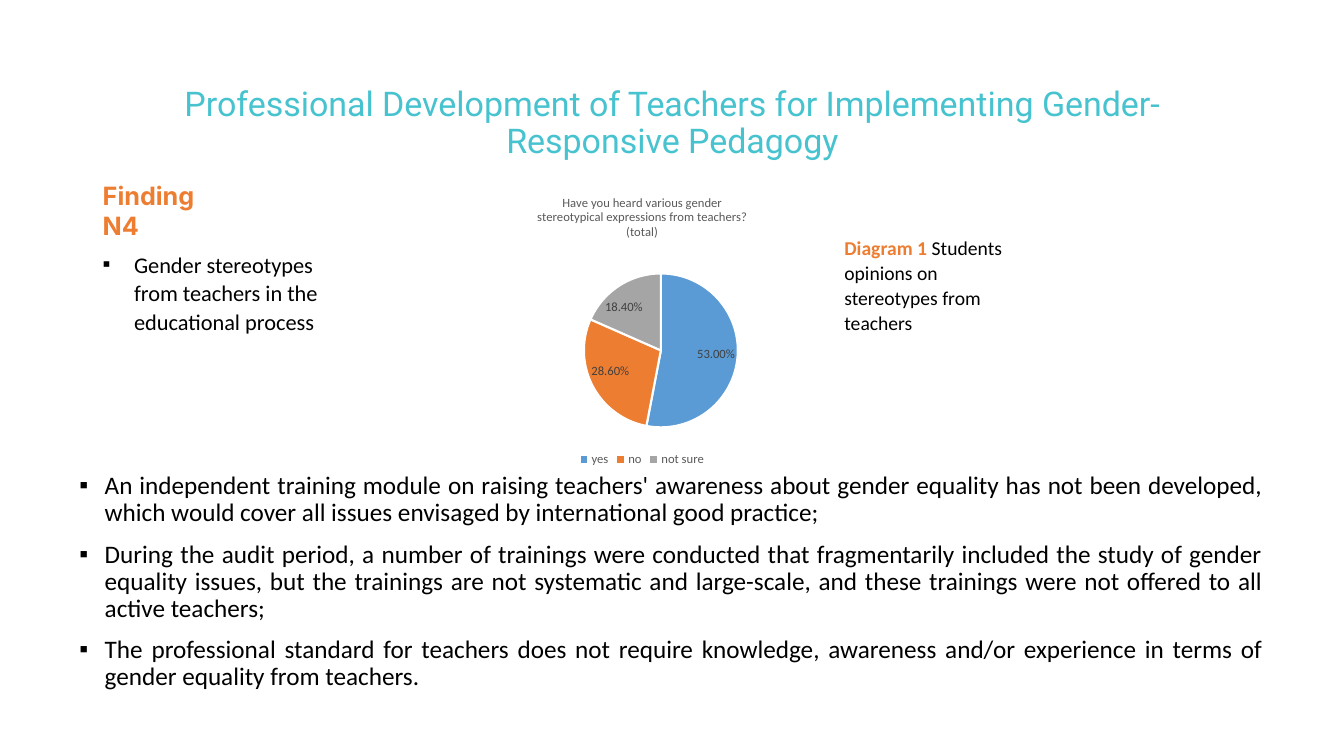
from dataclasses import dataclass

from lxml.etree import SubElement
from pptx import Presentation
from pptx.chart.data import CategoryChartData
from pptx.dml.color import RGBColor
from pptx.enum.chart import XL_CHART_TYPE, XL_LABEL_POSITION, XL_LEGEND_POSITION
from pptx.enum.text import MSO_ANCHOR, PP_ALIGN
from pptx.oxml import parse_xml
from pptx.oxml.ns import nsdecls, qn
from pptx.slide import Slide
from pptx.util import Cm, Pt

COLORS = {
    "title": "47C3D0",
    "accent": "ED7D31",
    "text": "000000",
    "yes": "5B9BD5",
    "no": "ED7D31",
    "not sure": "A5A5A5",
    "chart text": "595959",
    "label": "404040",
    "border": "FFFFFF",
}
ANSWERS = {"yes": 0.53, "no": 0.286, "not sure": 0.184}
PIE_LAYOUT = {"x": 0.3, "y": 0.32, "w": 0.53, "h": 0.53}


@dataclass(frozen=True)
class Box:
    """Position and size in centimetres."""
    left: float
    top: float
    width: float
    height: float

    def lengths(self) -> tuple:
        return Cm(self.left), Cm(self.top), Cm(self.width), Cm(self.height)


@dataclass(frozen=True)
class Run:
    text: str
    color: str = "text"
    bold: bool = False


def set_font(font, size: float, color: str, name: str = "Calibri", bold: bool = False) -> None:
    font.name, font.size, font.bold = name, Pt(size), bold
    font.color.rgb = RGBColor.from_string(COLORS[color])


def add_bullet(paragraph, indent: float) -> None:
    properties = paragraph._p.get_or_add_pPr()
    properties.set("marL", str(Cm(indent)))
    properties.set("indent", str(-Cm(indent)))
    SubElement(properties, qn("a:buFont")).set("typeface", "Arial")
    SubElement(properties, qn("a:buChar")).set("char", "▪")


def add_text(slide: Slide, box: Box, paragraphs: list[list[Run]], *, size: float,
             font: str = "Calibri", align: PP_ALIGN = PP_ALIGN.LEFT,
             anchor: MSO_ANCHOR = MSO_ANCHOR.TOP, line_spacing: float = 1.0,
             gap: float = 0, space_after: float = 0, indent: float = 0,
             bottom_margin: float = 0.13) -> None:
    """Add a text box; gap separates paragraphs and a nonzero indent adds bullets."""
    frame = slide.shapes.add_textbox(*box.lengths()).text_frame
    frame.word_wrap = True
    frame.vertical_anchor = anchor
    frame.margin_bottom = Cm(bottom_margin)
    for index, runs in enumerate(paragraphs):
        paragraph = frame.add_paragraph() if index else frame.paragraphs[0]
        paragraph.alignment = align
        paragraph.line_spacing = line_spacing
        if index:
            paragraph.space_before = Pt(gap)
        paragraph.space_after = Pt(space_after)
        if indent:
            add_bullet(paragraph, indent)
        for part in runs:
            run = paragraph.add_run()
            run.text = part.text
            set_font(run.font, size, part.color, font, part.bold)


def place_pie(chart) -> None:
    """Fix the inner plot area as fractions of the chart."""
    plot_area = chart._chartSpace.chart.plotArea
    for automatic in plot_area.findall(qn("c:layout")):
        plot_area.remove(automatic)
    values = "".join(f'<c:{key} val="{value}"/>' for key, value in PIE_LAYOUT.items())
    plot_area.insert(0, parse_xml(
        f'<c:layout {nsdecls("c")}><c:manualLayout><c:layoutTarget val="inner"/>'
        f'<c:xMode val="edge"/><c:yMode val="edge"/>{values}</c:manualLayout></c:layout>'))


def add_answers_chart(slide: Slide, box: Box) -> None:
    data = CategoryChartData(number_format="0.00%")
    data.categories = list(ANSWERS)
    data.add_series("Series 1", list(ANSWERS.values()))
    chart = slide.shapes.add_chart(XL_CHART_TYPE.PIE, *box.lengths(), data).chart
    set_font(chart.font, 10, "text")

    title = chart.chart_title.text_frame
    title.text = "Have you heard various gender stereotypical expressions from teachers? (total)"
    set_font(title.paragraphs[0].runs[0].font, 9, "chart text")
    chart.chart_title.include_in_layout = False

    chart.has_legend = True
    chart.legend.position = XL_LEGEND_POSITION.BOTTOM
    chart.legend.include_in_layout = False
    set_font(chart.legend.font, 9, "chart text")

    plot = chart.plots[0]
    plot.vary_by_categories = True
    for index, answer in enumerate(ANSWERS):
        style = plot.series[0].points[index].format
        style.fill.solid()
        style.fill.fore_color.rgb = RGBColor.from_string(COLORS[answer])
        style.line.color.rgb = RGBColor.from_string(COLORS["border"])
        style.line.width = Pt(1.5)
    plot.has_data_labels = True
    labels = plot.data_labels
    labels.show_value = True
    labels.show_percentage = False
    labels.number_format = "0.00%"
    labels.number_format_is_linked = False
    labels.position = XL_LABEL_POSITION.BEST_FIT
    set_font(labels.font, 9, "label")
    place_pie(chart)


def main() -> None:
    presentation = Presentation()
    presentation.slide_width, presentation.slide_height = Cm(33.87), Cm(19.05)
    slide = presentation.slides.add_slide(presentation.slide_layouts[6])

    add_text(slide, Box(2.34, 1.75, 29.21, 3.68),
             [[Run("Professional Development of Teachers for Implementing "
                   "Gender-Responsive Pedagogy", "title")]],
             size=24.3, font="Roboto", align=PP_ALIGN.CENTER, anchor=MSO_ANCHOR.MIDDLE,
             line_spacing=0.9, bottom_margin=1.05)
    conclusions = [
        "An independent training module on raising teachers' awareness about gender equality "
        "has not been developed, which would cover all issues envisaged by international "
        "good practice;",
        "During the audit period, a number of trainings were conducted that fragmentarily "
        "included the study of gender equality issues, but the trainings are not systematic "
        "and large-scale, and these trainings were not offered to all active teachers;",
        "The professional standard for teachers does not require knowledge, awareness and/or "
        "experience in terms of gender equality from teachers.",
    ]
    add_text(slide, Box(1.75, 11.79, 30.33, 7.67), [[Run(text)] for text in conclusions],
             size=18, align=PP_ALIGN.JUSTIFY, line_spacing=0.9, gap=10, indent=0.64)
    add_text(slide, Box(2.34, 4.42, 3.8, 1.02), [[Run("Finding N4", "accent", True)]],
             size=18, font="Inter")
    add_answers_chart(slide, Box(12.52, 4.55, 7.32, 7.32))
    add_text(slide, Box(21.03, 5.77, 4.65, 2.82),
             [[Run("Diagram 1 ", "accent", True),
               Run("Students opinions on stereotypes from teachers")]],
             size=14, line_spacing=1.07, space_after=8)
    add_text(slide, Box(2.34, 6.15, 6.65, 2.46),
             [[Run("Gender stereotypes from teachers in the educational process")]],
             size=16, line_spacing=1.07, space_after=8, indent=0.79)

    presentation.save("out.pptx")


if __name__ == "__main__":
    main()
